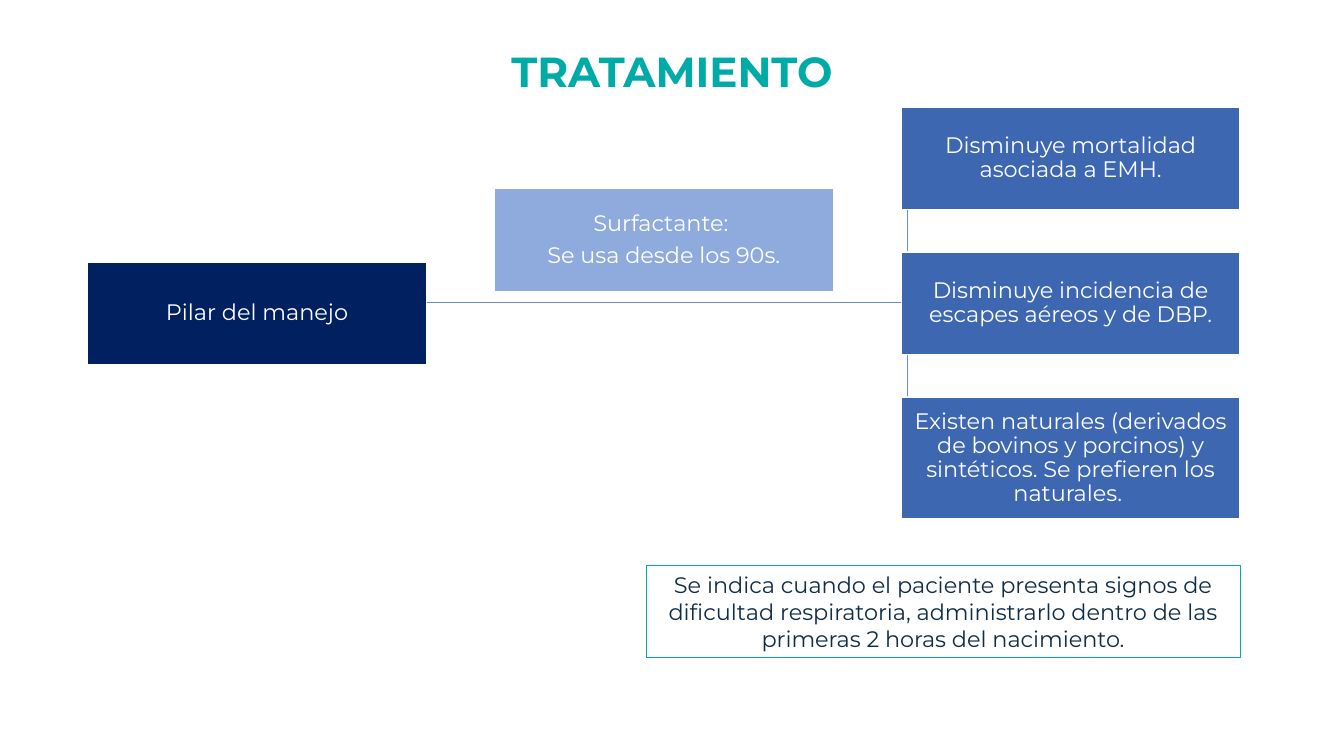
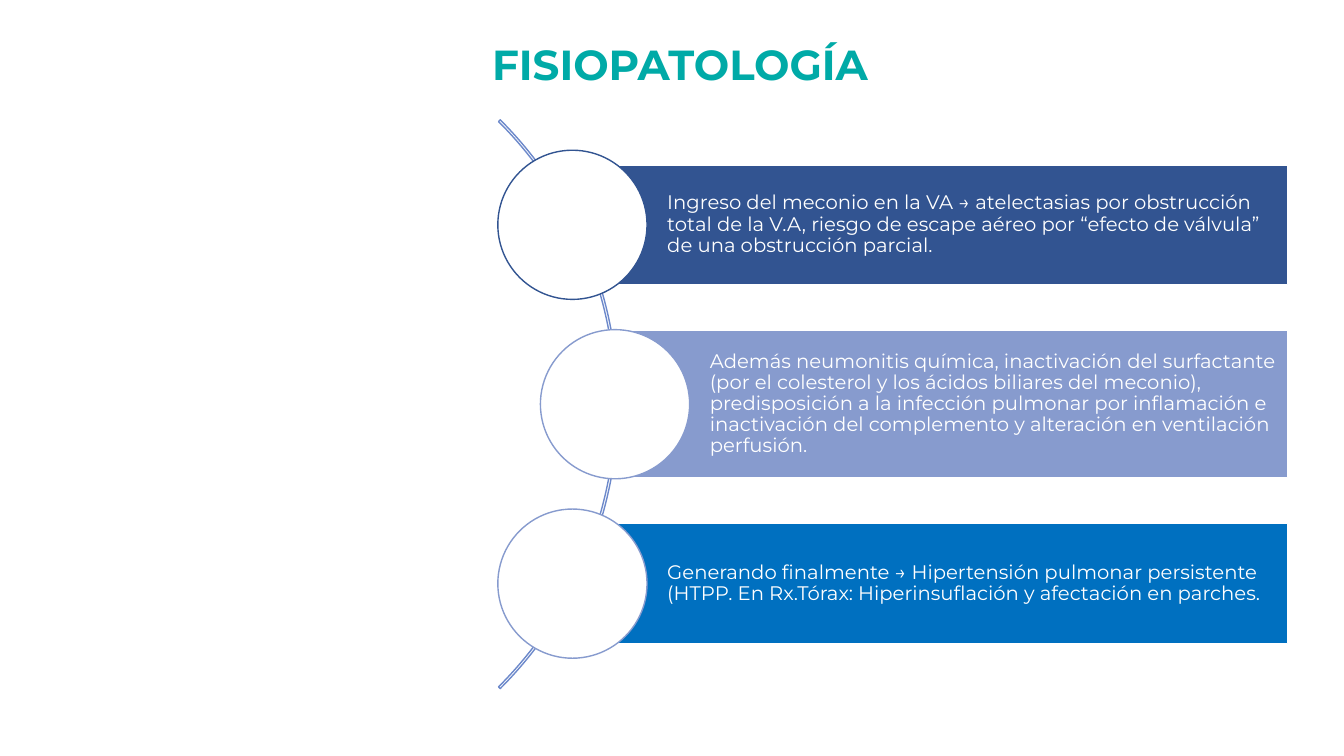
from dataclasses import dataclass
from math import sqrt

from pptx import Presentation
from pptx import util as u
from pptx.dml.color import RGBColor
from pptx.enum import shapes, text


@dataclass(frozen=True)
class Theme:
    font: str = "Montserrat"
    teal: str = "00AAA7"
    ink: str = "112C45"
    white: str = "FFFFFF"
    navy: str = "002060"
    sky: str = "8FAADC"
    blue: str = "3E67B2"
    wire: str = "6D89CB"
    deep: str = "325491"
    lilac: str = "879BCE"
    azure: str = "0070C0"
    head: int = 30
    body: int = 16
    note: int = 14
    thin: float = 0.75
    rule: float = 1


T = Theme()
SHAPE = shapes.MSO_SHAPE
MID = text.PP_ALIGN.CENTER
LEFT = text.PP_ALIGN.LEFT
WIDE, HIGH = 13.33, 7.5

TREAT = {
    "title": ("TRATAMIENTO", (4.57, 0.4, 4.19, 0.61)),
    "root": ["Pilar del manejo"],
    "drug": ["Surfactante: ", "Se usa desde los 90s."],
    "gains": [
        ("Disminuye mortalidad asociada a EMH.", 1.02),
        ("Disminuye incidencia de escapes aéreos y de DBP.", 1.02),
        ("Existen naturales (derivados de bovinos y porcinos) y sintéticos. "
         "Se prefieren los naturales. ", 1.21),
    ],
    "use": ["Se indica cuando el paciente presenta signos de dificultad "
            "respiratoria, administrarlo dentro de las primeras 2 horas "
            "del nacimiento."],
}
CAUSE = {
    "title": ("FISIOPATOLOGÍA", (4.43, 0.33, 4.63, 0.61)),
    "steps": [
        ("Ingreso del meconio en la VA → atelectasias por obstrucción total "
         "de la V.A, riesgo de escape aéreo por “efecto de válvula” de una "
         "obstrucción parcial.", 1.19, T.deep, T.deep),
        ("Además neumonitis química, inactivación del surfactante (por el "
         "colesterol y los ácidos biliares del meconio), predisposición a la "
         "infección pulmonar por inflamación e inactivación del complemento "
         "y alteración en ventilación perfusión.", 1.46, T.lilac, T.lilac),
        ("Generando finalmente → Hipertensión pulmonar persistente (HTPP. "
         "En Rx.Tórax: Hiperinsuflación y afectación en parches.",
         1.19, T.azure, T.lilac),
    ],
}


def apply(item, **vals):
    for key, val in vals.items():
        setattr(item, key, val)


def write(shape, lines, size, color, bold=False, align=MID, tight=True,
          pads=(0.01,) * 4):
    frame = shape.text_frame
    apply(frame, word_wrap=True, auto_size=text.MSO_AUTO_SIZE.NONE,
          vertical_anchor=text.MSO_ANCHOR.MIDDLE)
    for side, pad in zip(("left", "top", "right", "bottom"), pads):
        setattr(frame, "margin_" + side, u.Inches(pad))
    frame.text = "\n".join(lines)
    for par in frame.paragraphs:
        par.alignment = align
        if tight:
            apply(par, line_spacing=0.9, space_after=u.Pt(size * 0.35))
        apply(par.font, name=T.font, size=u.Pt(size), bold=bold)
        par.font.color.rgb = RGBColor.from_string(color)


def style(shape, fill=None, line=T.white, width=T.rule):
    shape.shadow.inherit = False
    if fill:
        shape.fill.solid()
        shape.fill.fore_color.rgb = RGBColor.from_string(fill)
    else:
        shape.fill.background()
    shape.line.color.rgb = RGBColor.from_string(line)
    shape.line.width = u.Pt(width)
    return shape


def draw(slide, kind, area, *look, **more):
    shape = slide.shapes.add_shape(kind, *map(u.Inches, area))
    return style(shape, *look, **more)


def wire(slide, first, *rest):
    pen = slide.shapes.build_freeform(*first, scale=u.Inches(1))
    pen.add_line_segments(rest, close=False)
    style(pen.convert_to_shape(), line=T.wire)


def start(deck, title):
    slide = deck.slides.add_slide(deck.slide_layouts[5])
    label, area = title
    head = slide.shapes.title
    apply(head, **dict(zip(("left", "top", "width", "height"),
                           map(u.Inches, area))))
    write(head, [label], T.head, T.teal, bold=True, tight=False,
          pads=(0.1, 0.05, 0.1, 0.05))
    return slide


def treat(deck):
    slide = start(deck, TREAT["title"])
    wide, high, gap = 3.36, 1.02, 0.42
    near, far = 0.87, 8.94
    cols = [near + (far - near) / 2 * i for i in range(3)]
    spine, axis, roof = 8.6, 3.11, 1.87

    cards = [(TREAT["root"], cols[0], axis - high / 2, high, T.navy)]
    top = 1.06
    for label, tall in TREAT["gains"]:
        cards.append(([label], cols[2], top, tall, T.blue))
        top += tall + gap
    cards.append((TREAT["drug"], cols[1], roof, high, T.sky))

    base, mid = (cols[0] + wide, axis), cols[1] + wide / 2
    wire(slide, base, (mid, axis), (mid, roof + high))
    for _, left, top, tall, _ in reversed(cards[1:-1]):
        level = top + tall / 2
        wire(slide, base, (spine, axis), (spine, level), (left, level))
    for lines, left, top, tall, fill in cards:
        box = draw(slide, SHAPE.RECTANGLE, (left, top, wide, tall), fill)
        write(box, lines, T.body, T.white)

    use = draw(slide, SHAPE.RECTANGLE, (6.41, 5.61, 5.89, 0.91),
               line=T.teal, width=T.thin)
    write(use, TREAT["use"], T.body, T.ink, tight=False,
          pads=(0.1, 0.05, 0.1, 0.05))


def cause(deck):
    slide = start(deck, CAUSE["title"])
    hub, axis, reach, orbit = 2.14, 4.01, 3.99, 3.96
    pitch, disc, edge = 1.78, 1.48, 12.77
    arc = draw(slide, SHAPE.BLOCK_ARC,
               (hub - reach, axis - reach, 2 * reach, 2 * reach), line=T.wire)
    for i, val in enumerate((189, 27, 0.003)):
        arc.adjustments[i] = val
    for i, (label, tall, fill, ring) in enumerate(CAUSE["steps"]):
        drop = (i - 1) * pitch
        x, y = hub + sqrt(orbit ** 2 - drop ** 2), axis + drop
        bar = draw(slide, SHAPE.RECTANGLE,
                   (x, y - tall / 2, edge - x, tall), fill)
        write(bar, [label], T.note, T.white, align=LEFT,
              pads=(0.94, 0.04, 0.04, 0.04))
        draw(slide, SHAPE.OVAL, (x - disc / 2, y - disc / 2, disc, disc),
             T.white, ring)


def main():
    deck = Presentation()
    apply(deck, slide_width=u.Inches(WIDE), slide_height=u.Inches(HIGH))
    treat(deck)
    cause(deck)
    deck.save("out.pptx")


if __name__ == "__main__":
    main()
